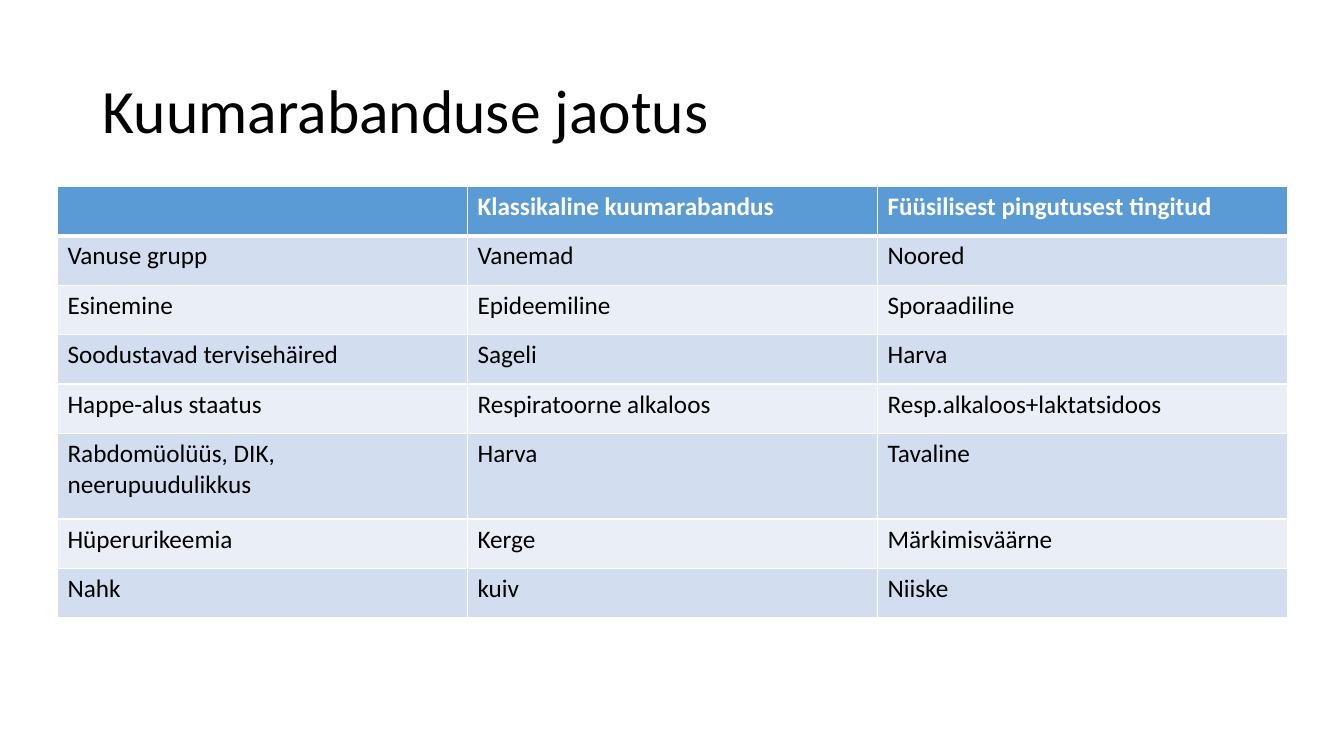
from lxml import etree
from pptx import Presentation
from pptx.dml.color import RGBColor
from pptx.enum.text import MSO_ANCHOR, PP_ALIGN
from pptx.oxml.ns import qn
from pptx.util import Inches, Pt

MIDDLE, LEFT = MSO_ANCHOR.MIDDLE, PP_ALIGN.LEFT

# Content
TITLE = "Kuumarabanduse jaotus"
ROWS = [
    ("", "Klassikaline kuumarabandus", "Füüsilisest pingutusest tingitud"),
    ("Vanuse grupp", "Vanemad", "Noored"),
    ("Esinemine", "Epideemiline", "Sporaadiline"),
    ("Soodustavad tervisehäired", "Sageli", "Harva"),
    ("Happe-alus staatus", "Respiratoorne alkaloos", "Resp.alkaloos+laktatsidoos"),
    ("Rabdomüolüüs, DIK, neerupuudulikkus", "Harva", "Tavaline"),
    ("Hüperurikeemia", "Kerge", "Märkimisväärne"),
    ("Nahk", "kuiv", "Niiske"),
]

# Look
FONT = "Calibri"
BLACK = RGBColor(0x00, 0x00, 0x00)
WHITE = RGBColor(0xFF, 0xFF, 0xFF)
BLUE = RGBColor(0x5B, 0x9B, 0xD5)
BANDS = [RGBColor(0xEA, 0xEF, 0xF7), RGBColor(0xD2, 0xDE, 0xEF)]

# Grid, in inches
WIDE, HIGH = 13.33, 7.5
LEFT_EDGE, TOP_EDGE, TABLE_WIDE = 0.57, 1.85, 12.2
ROW_HIGH, TALL_HIGH, TALL_ROW = 0.49, 0.85, 5


def write(frame, text, size=18, color=BLACK, bold=False):
    para = frame.paragraphs[0]
    para.alignment = LEFT
    font = para.font
    if text:
        run = para.add_run()
        run.text = text
        font = run.font
    font.name, font.size, font.bold = FONT, Pt(size), bold
    font.color.rgb = color
    return para


def edge(cell, side, width):
    props = cell._tc.get_or_add_tcPr()
    line = etree.SubElement(props, qn("a:" + side), w=str(Pt(width)))
    fill = etree.SubElement(line, qn("a:solidFill"))
    etree.SubElement(fill, qn("a:srgbClr"), val=str(WHITE))


def add_title(slide):
    title = slide.shapes.title
    title.left, title.top = Inches(0.92), Inches(0.4)
    title.width, title.height = Inches(11.5), Inches(1.45)
    title.text_frame.vertical_anchor = MIDDLE
    title.text_frame.word_wrap = True
    write(title.text_frame, TITLE, size=44).line_spacing = 0.9


def add_grid(slide):
    highs = [TALL_HIGH if r == TALL_ROW else ROW_HIGH for r in range(len(ROWS))]
    cols = len(ROWS[0])
    table = slide.shapes.add_table(
        len(ROWS), cols, Inches(LEFT_EDGE), Inches(TOP_EDGE),
        Inches(TABLE_WIDE), Inches(sum(highs))).table
    for col in table.columns:
        col.width = Inches(TABLE_WIDE / cols)
    for r, texts in enumerate(ROWS):
        table.rows[r].height = Inches(highs[r])
        head = r == 0
        for c, text in enumerate(texts):
            cell = table.cell(r, c)
            # Thick rule between the header and the first row
            for side, width in (("lnL", 1), ("lnR", 1),
                                ("lnT", 3 if r == 1 else 1),
                                ("lnB", 3 if head else 1)):
                edge(cell, side, width)
            cell.fill.solid()
            cell.fill.fore_color.rgb = BLUE if head else BANDS[r % 2]
            write(cell.text_frame, text, color=WHITE if head else BLACK, bold=head)


def main():
    deck = Presentation()
    deck.slide_width, deck.slide_height = Inches(WIDE), Inches(HIGH)
    slide = deck.slides.add_slide(deck.slide_layouts[5])
    add_title(slide)
    add_grid(slide)
    deck.save("out.pptx")


if __name__ == "__main__":
    main()
